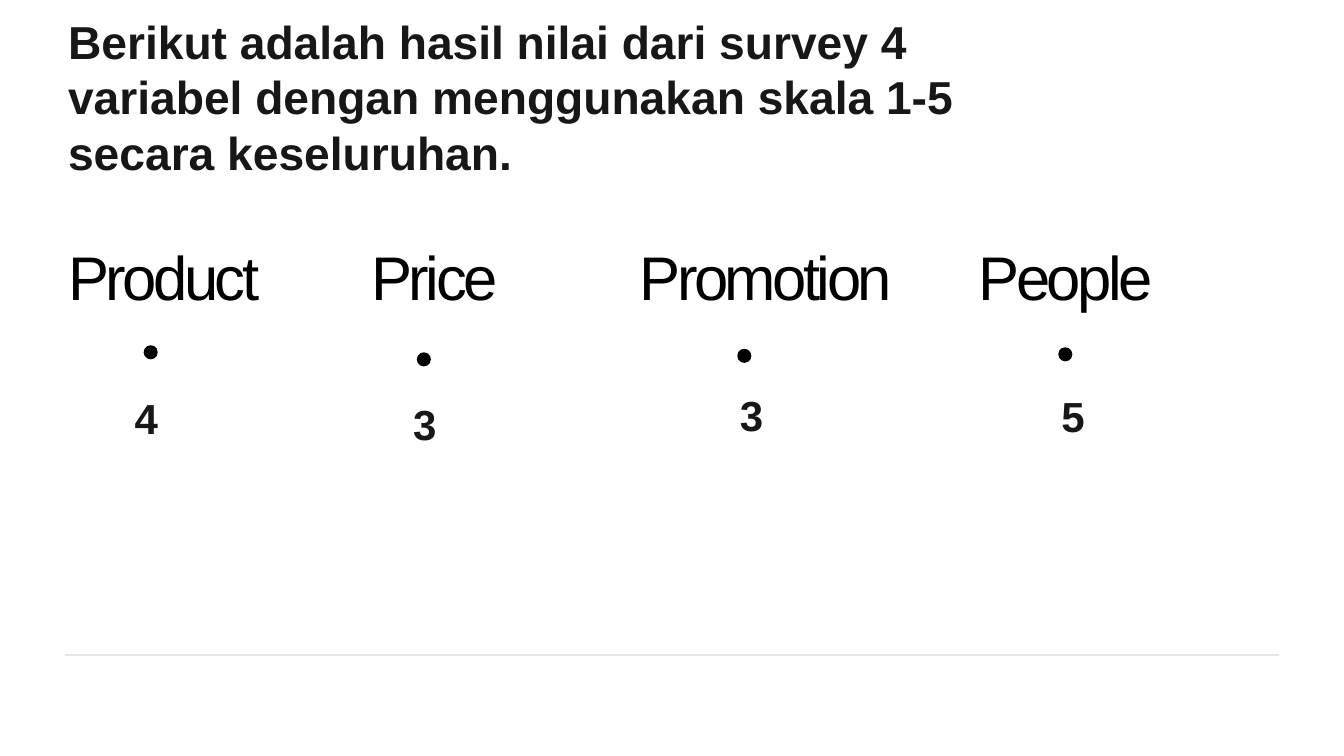
import dataclasses

import pptx
import pptx.dml.color
import pptx.enum.shapes
import pptx.enum.text
import pptx.slide
import pptx.text.text
import pptx.util

Inches = pptx.util.Inches
Box = tuple[float, float, float, float]

COLORS = {"ink": "171717", "black": "000000", "rule": "E6E6E6"}
FONT = "Arial"
PAD = 0.06
DOT = 0.28


@dataclasses.dataclass
class Score:
    name: str
    left: float
    dot: tuple[float, float]
    value: str
    box: Box


SCORES = [
    Score("Product", 1.29, (2.85, 6.85), "4", (2.61, 7.59, 3.38, 1.21)),
    Score("Price", 7.31, (8.27, 6.99), "3", (8.14, 7.71, 3.38, 1.21)),
    Score("Promotion", 12.63, (14.63, 6.92), "3", (14.62, 7.53, 3.33, 1.21)),
    Score("People", 19.36, (21, 6.89), "5", (21, 7.48, 3.38, 1.32)),
]
TITLE = (
    "Berikut adalah hasil nilai dari survey 4 variabel dengan "
    "menggunakan skala 1-5 secara keseluruhan."
)


def color(key: str) -> pptx.dml.color.RGBColor:
    return pptx.dml.color.RGBColor.from_string(COLORS[key])


def add_text(
    slide: pptx.slide.Slide, text: str, box: Box, size: int, key: str, bold: bool
) -> pptx.text.text._Paragraph:
    frame = slide.shapes.add_textbox(*map(Inches, box)).text_frame
    frame.word_wrap = True
    frame.auto_size = pptx.enum.text.MSO_AUTO_SIZE.SHAPE_TO_FIT_TEXT
    frame.vertical_anchor = pptx.enum.text.MSO_ANCHOR.MIDDLE
    frame.margin_left = frame.margin_right = Inches(PAD)
    frame.margin_top = frame.margin_bottom = Inches(PAD)
    para = frame.paragraphs[0]
    para.text = text
    para.font.name = FONT
    para.font.size = pptx.util.Pt(size)
    para.font.bold = bold
    para.font.color.rgb = color(key)
    return para


def add_rule(slide: pptx.slide.Slide) -> None:
    rule = slide.shapes.add_connector(
        pptx.enum.shapes.MSO_CONNECTOR.STRAIGHT,
        Inches(1.29), Inches(13), Inches(25.38), Inches(13),
    )
    rule.line.color.rgb = color("rule")
    rule.line.width = pptx.util.Pt(2)
    rule._element.spPr.append(pptx.oxml.parse_xml(
        '<a:effectLst xmlns:a="http://schemas.openxmlformats.org/drawingml/2006/main"/>'
    ))


def add_score(slide: pptx.slide.Slide, score: Score) -> None:
    dot = slide.shapes.add_shape(
        pptx.enum.shapes.MSO_SHAPE.OVAL,
        *map(Inches, (*score.dot, DOT, DOT)),
    )
    dot.shadow.inherit = False
    dot.fill.solid()
    dot.fill.fore_color.rgb = color("black")
    dot.line.fill.background()

    name = add_text(
        slide, score.name, (score.left, 4.84, 5.33, 1.45), 88, "black", False
    )
    name.line_spacing = 0.9
    name.runs[0]._r.get_or_add_rPr().set("spc", "-500")

    value = add_text(slide, score.value, score.box, 60, "ink", True)
    value.line_spacing = 1.2


def main() -> None:
    deck = pptx.Presentation()
    deck.slide_width = Inches(26.67)
    deck.slide_height = Inches(15)
    slide = deck.slides.add_slide(deck.slide_layouts[6])
    add_rule(slide)
    title = add_text(slide, TITLE, (1.29, 0.19, 18.35, 3.44), 66, "ink", True)
    title.space_before = pptx.util.Pt(15)
    for score in SCORES:
        add_score(slide, score)
    deck.save("out.pptx")


if __name__ == "__main__":
    main()
